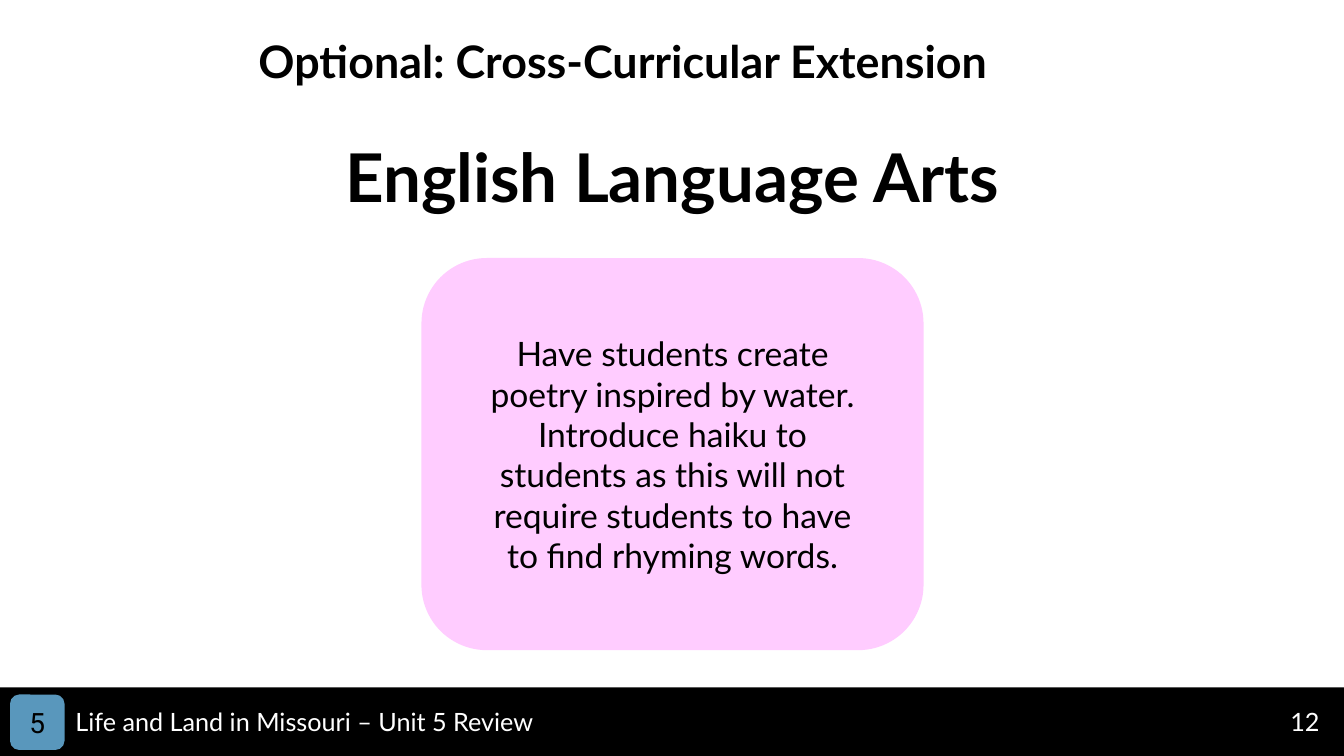
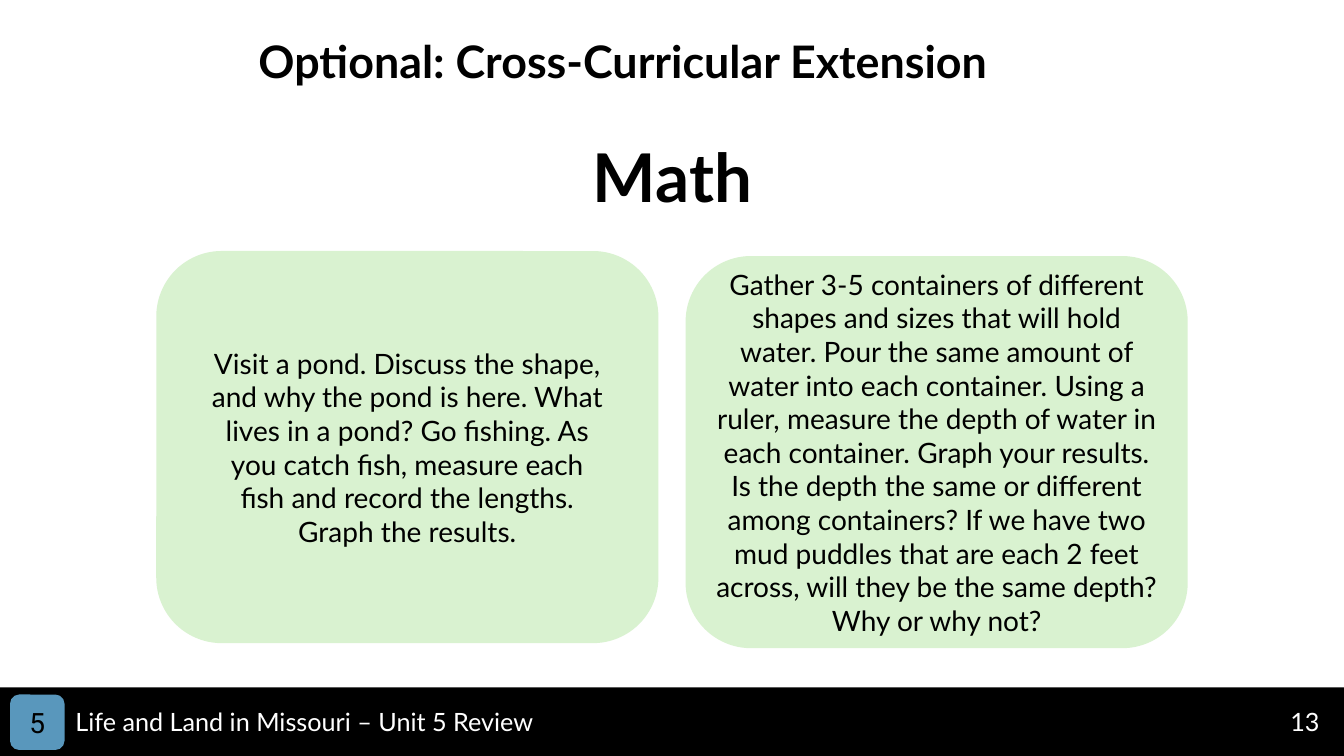
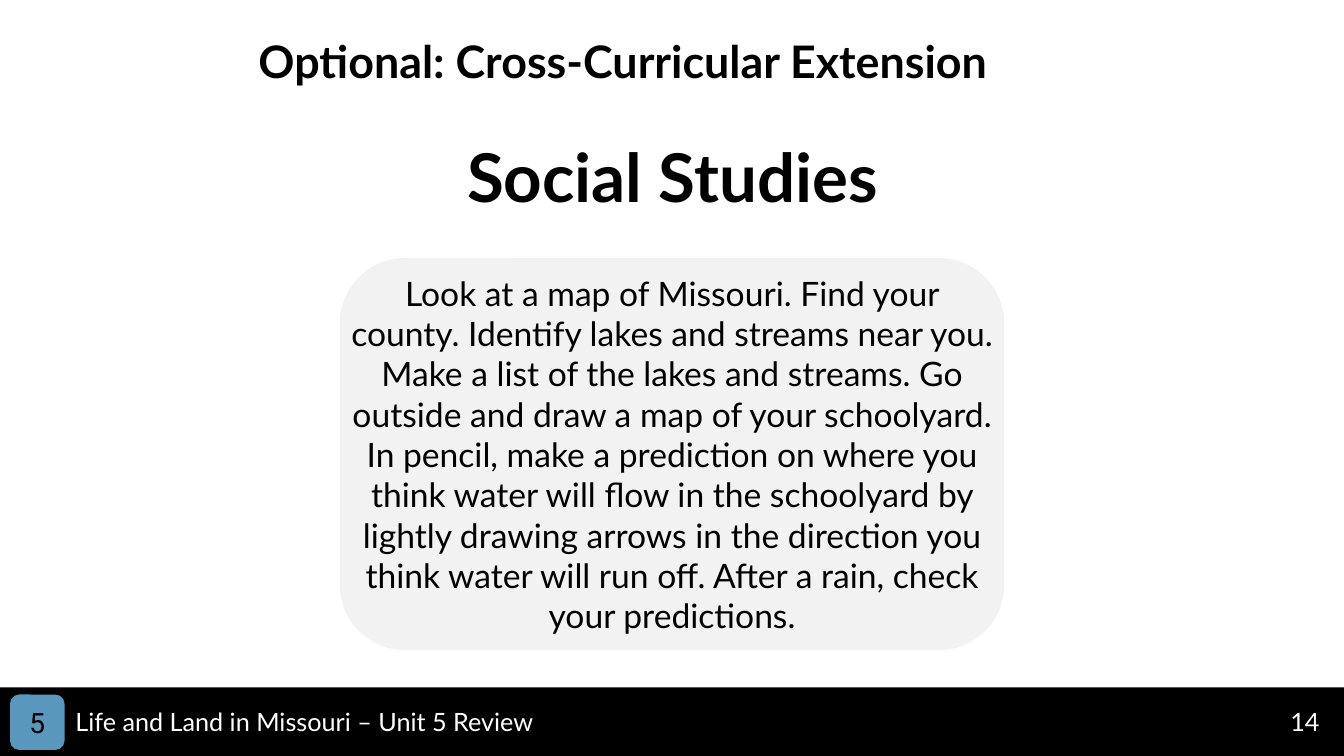
"""Build three lesson slides with cross-curricular extension ideas."""
from pptx import Presentation
from pptx.dml.color import RGBColor
from pptx.enum.shapes import MSO_SHAPE
from pptx.enum.text import MSO_ANCHOR, MSO_AUTO_SIZE, PP_ALIGN
from pptx.util import Emu, Pt

EMU_PER_PX = 9144
SLIDE_WIDTH, SLIDE_HEIGHT = 1333, 750
TITLE_ONLY = 5
BODY_FONT, BADGE_FONT = "Lato", "Roboto"
BLACK, WHITE, BLUE = "000000", "FFFFFF", "5997BC"
PINK, GREEN, GRAY = "FFCCFF", "D9F2D0", "F2F2F2"
TITLE = "Optional: Cross-Curricular Extension"
UNIT = "Life and Land in Missouri – Unit 5 Review"
UNIT_NUMBER = "5"
FIRST_PAGE = 12
CARD_HEIGHT = 389

LESSONS = [
    ("English Language Arts", PINK, 24, [
        ((418, 256, 498), (411, 252),
         "Have students create poetry inspired by water. Introduce haiku to "
         "students as this will not require students to have to find rhyming "
         "words."),
    ]),
    ("Math", GREEN, 20, [
        ((155, 249, 498), (411, 212),
         "Visit a pond. Discuss the shape, and why the pond is here. What "
         "lives in a pond? Go fishing. As you catch fish, measure each fish "
         "and record the lengths. Graph the results."),
        ((680, 254, 498), (462, 380),
         "Gather 3-5 containers of different shapes and sizes that will hold "
         "water. Pour the same amount of water into each container. Using a "
         "ruler, measure the depth of water in each container. Graph your "
         "results. Is the depth the same or different among containers? If "
         "we have two mud puddles that are each 2 feet across, will they be "
         "the same depth? Why or why not?"),
    ]),
    ("Social Studies", GRAY, 24, [
        ((337, 256, 659), (659, 374),
         "Look at a map of Missouri. Find your county. Identify lakes and "
         "streams near you. Make a list of the lakes and streams. Go outside "
         "and draw a map of your schoolyard. In pencil, make a prediction on "
         "where you think water will flow in the schoolyard by lightly "
         "drawing arrows in the direction you think water will run off. "
         "After a rain, check your predictions."),
    ]),
]


def px(length):
    """Turn px into EMU."""
    return Emu(round(length * EMU_PER_PX))


def color(value):
    """Turn a hex string into a colour."""
    return RGBColor.from_string(value)


def write(shape, text, size, ink=BLACK, font=BODY_FONT, bold=False,
          align=PP_ALIGN.CENTER):
    """Fill a shape with one formatted, vertically centred paragraph."""
    frame = shape.text_frame
    frame.text = text
    frame.word_wrap = True
    frame.auto_size = MSO_AUTO_SIZE.NONE
    frame.vertical_anchor = MSO_ANCHOR.MIDDLE
    paragraph = frame.paragraphs[0]
    paragraph.alignment = align
    paragraph.font.name = font
    paragraph.font.size = Pt(size)
    paragraph.font.bold = bold
    paragraph.font.color.rgb = color(ink)


def add_title(slide):
    """Place and format the title placeholder."""
    title = slide.shapes.title
    title.left, title.top = px(213), px(28)
    title.width, title.height = px(810), px(64)
    write(title, TITLE, 32, bold=True)


def add_label(slide, box, text, size, **style):
    """Add a text box."""
    label = slide.shapes.add_textbox(*map(px, box))
    write(label, text, size, **style)


def add_block(slide, kind, box, fill):
    """Add a filled shape without outline or shadow."""
    block = slide.shapes.add_shape(kind, *map(px, box))
    block.shadow.inherit = False
    block.fill.solid()
    block.fill.fore_color.rgb = color(fill)
    block.line.fill.background()
    return block


def add_card(slide, place, text_size, text, fill, size):
    """Add a rounded card with a text box centred on it."""
    left, top, width = place
    text_width, text_height = text_size
    add_block(slide, MSO_SHAPE.ROUNDED_RECTANGLE,
              (left, top, width, CARD_HEIGHT), fill)
    text_box = (left + (width - text_width) / 2,
                top + (CARD_HEIGHT - text_height) / 2,
                text_width, text_height)
    add_label(slide, text_box, text, size)


def add_footer(slide, page):
    """Add the black band with unit badge, unit name and page number."""
    add_block(slide, MSO_SHAPE.RECTANGLE, (0, 682, SLIDE_WIDTH, 70), BLACK)
    badge = add_block(slide, MSO_SHAPE.ROUNDED_RECTANGLE,
                      (10, 689, 54, 55), BLUE)
    write(badge, UNIT_NUMBER, 20, font=BADGE_FONT)
    for left, width, text in ((65, 861, UNIT), (1270, 54, str(page))):
        add_label(slide, (left, 696, width, 40), text, 18, ink=WHITE,
                  align=PP_ALIGN.LEFT)


def main():
    """Build and save the presentation."""
    presentation = Presentation()
    presentation.slide_width = px(SLIDE_WIDTH)
    presentation.slide_height = px(SLIDE_HEIGHT)
    layout = presentation.slide_layouts[TITLE_ONLY]
    for page, (subject, fill, size, cards) in enumerate(LESSONS, FIRST_PAGE):
        slide = presentation.slides.add_slide(layout)
        add_title(slide)
        add_label(slide, (287, 129, 760, 91), subject, 48, bold=True)
        for place, text_size, text in cards:
            add_card(slide, place, text_size, text, fill, size)
        add_footer(slide, page)
    presentation.save("out.pptx")


if __name__ == "__main__":
    main()
